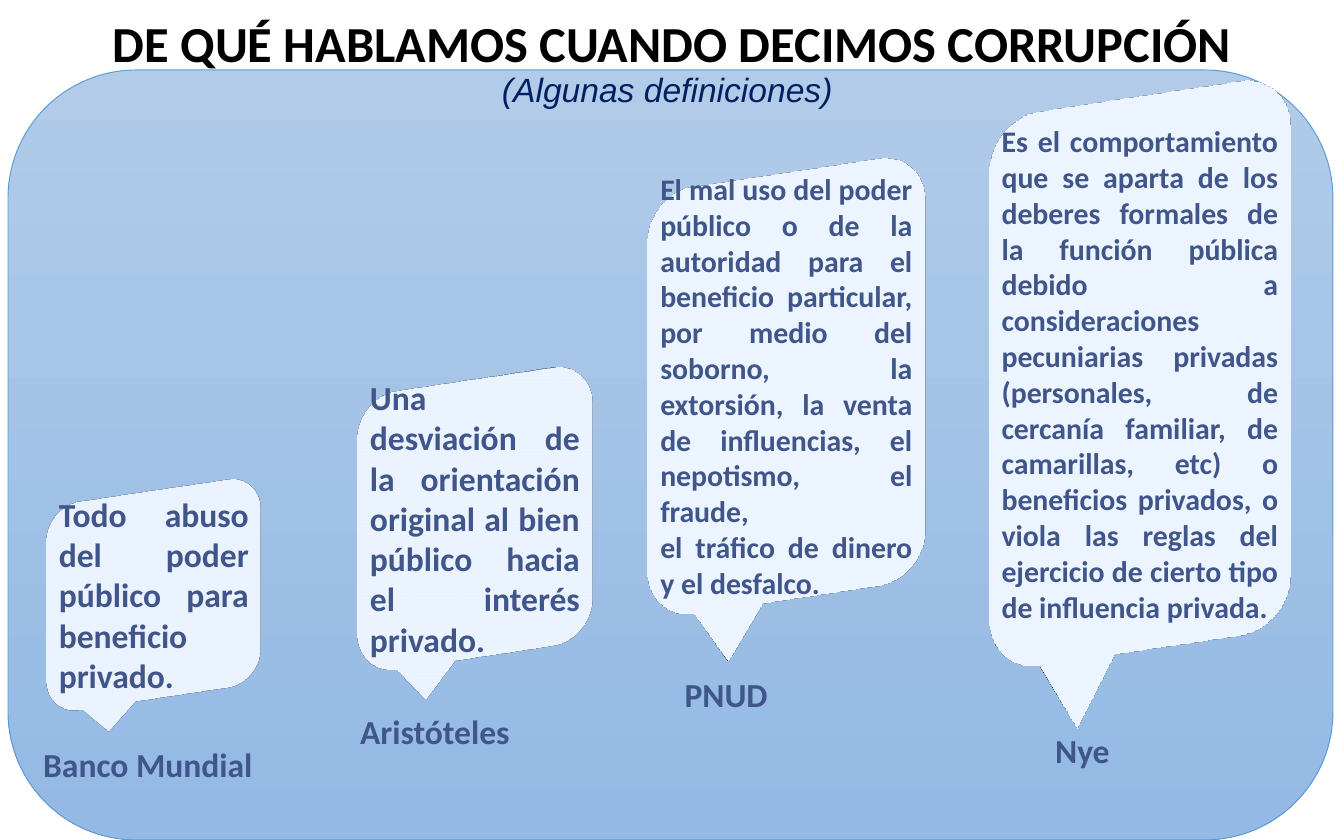
from dataclasses import dataclass

from pptx import Presentation
from pptx.dml.color import RGBColor as Rgb
from pptx.enum.shapes import MSO_SHAPE as Shape
from pptx.enum.text import MSO_ANCHOR as Anchor, MSO_AUTO_SIZE as AutoSize, PP_ALIGN as Align
from pptx.oxml import parse_xml
from pptx.oxml.ns import nsdecls
from pptx.util import Emu, Pt


@dataclass
class Theme:
    panel_top: str = "B1CBE9"
    panel_bottom: str = "93B9E4"
    panel_line: str = "5B9BD5"
    bubble: str = "DAE3F3"
    slate: str = "44546A"
    ink: str = "40558A"
    heading: str = "000000"
    navy: str = "002060"
    font: str = "Calibri"
    subfont: str = "Arial"
    heading_size: int = 27
    label_size: int = 18
    small_size: int = 16


theme = Theme()
SCALE = 914400 / 134.4
SCENE = (
    f'<a:scene3d {nsdecls("a")}><a:camera prst="isometricOffAxis1Right"/>'
    '<a:lightRig rig="threePt" dir="t"/></a:scene3d>'
)


def px(value):
    return Emu(round(value * SCALE))


def style(font, name, size, color, bold=True, italic=False):
    font.name, font.size, font.bold, font.italic = name, Pt(size), bold, italic
    font.color.rgb = Rgb.from_string(color)


deck = Presentation()
deck.slide_width, deck.slide_height = px(1344), px(840)
page = deck.slides.add_slide(deck.slide_layouts[5])

title = page.shapes.title
title.left, title.top, title.width, title.height = px(45), px(9), px(1254), px(111)
title.text_frame.text = "DE QUÉ HABLAMOS CUANDO DECIMOS CORRUPCIÓN\v(Algunas definiciones) "
title.text_frame.word_wrap = True
title.text_frame.vertical_anchor = Anchor.MIDDLE
para = title.text_frame.paragraphs[0]
para.alignment, para.line_spacing = Align.CENTER, 0.9
heading, subheading = para.runs
style(heading.font, theme.font, theme.heading_size, theme.heading)
style(subheading.font, theme.subfont, theme.label_size, theme.navy, False, True)

panel = page.shapes.add_shape(Shape.ROUNDED_RECTANGLE, px(8), px(70), px(1325), px(770))
title.element.addprevious(panel.element)
panel.shadow.inherit = False
panel.fill.gradient()
panel.fill.gradient_angle = 270
for stop, color in zip(panel.fill.gradient_stops, (theme.panel_top, theme.panel_bottom)):
    stop.color.rgb = Rgb.from_string(color)
panel.line.color.rgb = Rgb.from_string(theme.panel_line)
panel.line.width = Pt(0.5)

definitions = [
    ("Aristóteles", (335, 704, 188), Align.RIGHT, (344, 372, 262, 292),
     theme.slate, theme.label_size,
     "Una desviación de la orientación original al bien público hacia el interés privado."),
    ("Banco Mundial", (30, 737, 238), Align.JUSTIFY, (35, 485, 238, 219),
     theme.navy, theme.label_size,
     "Todo abuso del poder público para beneficio privado. "),
    ("Nye", (1041, 723, 82), Align.RIGHT, (972, 82, 336, 583),
     theme.navy, theme.small_size,
     "Es el comportamiento que se aparta de los deberes formales de la función pública "
     "debido a consideraciones pecuniarias privadas (personales, de cercanía familiar, de "
     "camarillas, etc) o beneficios privados, o viola las reglas del ejercicio de cierto "
     "tipo de influencia privada. "),
    ("PNUD", (670, 667, 111), Align.RIGHT, (632, 161, 309, 449),
     theme.navy, theme.small_size,
     "El mal uso del poder público o de la autoridad para el beneficio particular, \n"
     "por medio del soborno, la extorsión, la venta de influencias, el nepotismo, el fraude,\n"
     "el tráfico de dinero y el desfalco. "),
]

for author, label_place, label_align, bubble_place, edge, size, definition in definitions:
    callout = page.shapes.add_shape(Shape.ROUNDED_RECTANGULAR_CALLOUT, *map(px, bubble_place))
    callout.shadow.inherit = False
    callout.fill.solid()
    callout.fill.fore_color.rgb = Rgb.from_string(theme.bubble)
    callout.line.color.rgb = Rgb.from_string(edge)
    callout.line.width = Pt(1)
    callout.element.spPr.append(parse_xml(SCENE))
    callout.element.spPr.append(parse_xml(f'<a:sp3d {nsdecls("a")}/>'))

    frame = callout.text_frame
    frame.text = definition
    frame.word_wrap = True
    frame.vertical_anchor = Anchor.MIDDLE
    for para in frame.paragraphs:
        para.alignment = Align.JUSTIFY
        for span in para.runs:
            style(span.font, theme.font, size, theme.ink)

    left, top, width = label_place
    label = page.shapes.add_textbox(px(left), px(top), px(width), px(54))
    label.text_frame.text = author
    label.text_frame.word_wrap = False
    label.text_frame.auto_size = AutoSize.SHAPE_TO_FIT_TEXT
    para = label.text_frame.paragraphs[0]
    para.alignment = label_align
    style(para.runs[0].font, theme.font, theme.label_size, theme.ink)

deck.save("out.pptx")
